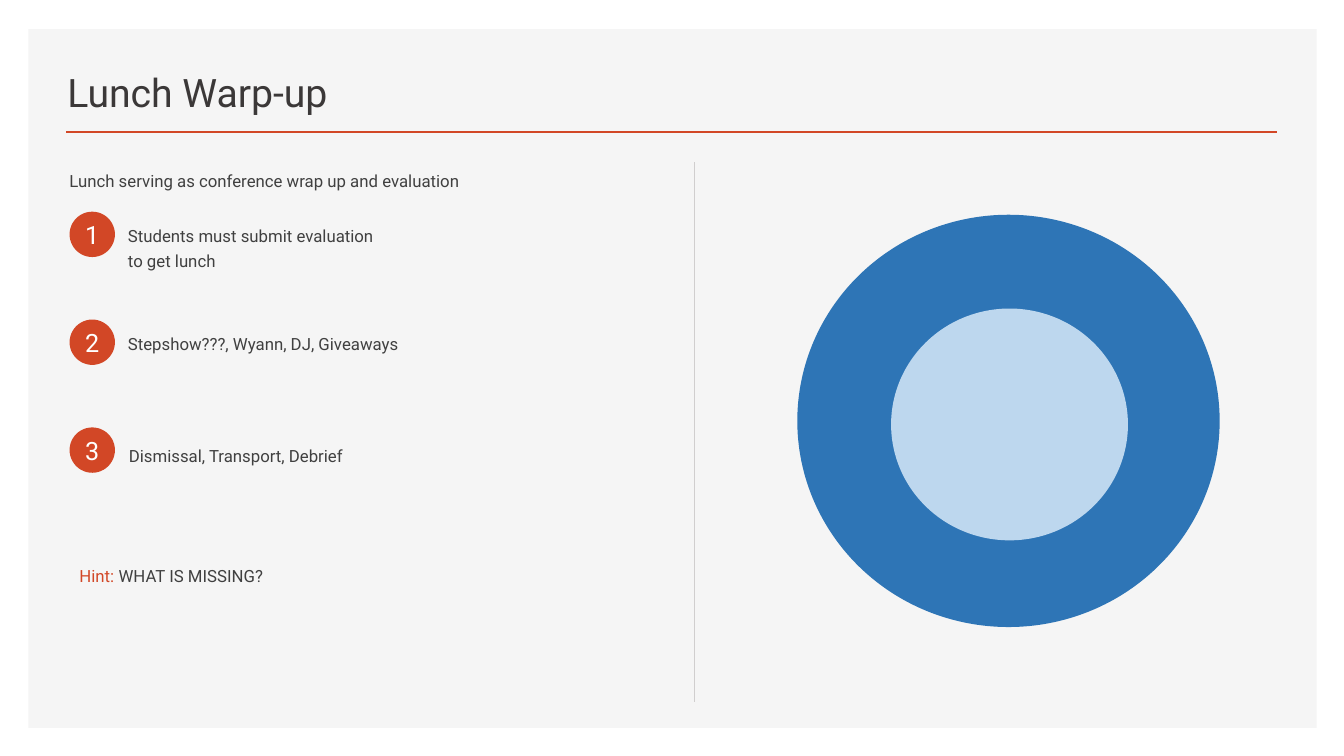
from pptx import Presentation
from pptx.dml.color import RGBColor
from pptx.enum import shapes, text
from pptx.oxml import parse_xml
from pptx.oxml.ns import nsdecls
from pptx.util import Pt

FONT = "Roboto"
ORANGE, GREY = "D24726", "404040"
OVAL, RECT = shapes.MSO_SHAPE.OVAL, shapes.MSO_SHAPE.RECTANGLE
TOP, MIDDLE, BOTTOM = text.MSO_ANCHOR.TOP, text.MSO_ANCHOR.MIDDLE, text.MSO_ANCHOR.BOTTOM


def color(hex_code):
    return RGBColor.from_string(hex_code)


def add_filled(slide, kind, box, fill):
    shape = slide.shapes.add_shape(kind, *map(Pt, box))
    shape.shadow.inherit = False
    shape.fill.solid()
    shape.fill.fore_color.rgb = color(fill)
    shape.line.fill.background()
    return shape


def add_rule(slide, start, end, hue, width):
    rule = slide.shapes.add_connector(
        shapes.MSO_CONNECTOR.STRAIGHT, *map(Pt, (*start, *end)))
    rule.line.color.rgb = color(hue)
    rule.line.width = Pt(width)
    rule._element.spPr.append(parse_xml(f"<a:effectLst {nsdecls('a')}/>"))


def write(frame, parts, size, anchor=TOP):
    """Fill one paragraph with (wording, colour) parts."""
    frame.word_wrap = True
    frame.vertical_anchor = anchor
    line = frame.paragraphs[0]
    line.font.name, line.font.size = FONT, Pt(size)
    for wording, hue in parts:
        run = line.add_run()
        run.text = wording
        run.font.color.rgb = color(hue)
    return line


def add_body(slide, box, *parts):
    frame = slide.shapes.add_textbox(*map(Pt, box)).text_frame
    line = write(frame, parts, 12)
    line.line_spacing = Pt(18)
    line.space_before, line.space_after = Pt(10), Pt(20)


def add_header(slide, left, top, width, height):
    title = slide.shapes.add_textbox(*map(Pt, (left, top, 541.4, height)))
    write(title.text_frame, [("Lunch Warp-up", "3B3838")], 28, BOTTOM)
    rule_y = top + height + 8.6
    add_rule(slide, (left + 6.5, rule_y), (left + width, rule_y), ORANGE, 2)


def add_step(slide, left, top, number, wording, offset, size):
    badge = add_filled(slide, OVAL, (left, top, 32.4, 32.4), ORANGE)
    frame = badge.text_frame
    frame.margin_left = frame.margin_right = 0
    frame.margin_top = frame.margin_bottom = 0
    label = write(frame, [(str(number), "FFFFFF")], 18, MIDDLE)
    label.alignment = text.PP_ALIGN.CENTER
    dx, dy = offset
    add_body(slide, (left + dx, top + dy, *size), (wording, GREY))


def add_agenda(slide, left, top, width):
    add_body(slide, (left, top, width, 37.4),
             ("Lunch serving as conference wrap up and evaluation", GREY))
    steps = [
        ("Students must submit evaluation to get lunch", (34.6, 2.9), (195.8, 72)),
        ("Stepshow???, Wyann, DJ, Giveaways", (34.6, 2.9), (208.8, 114.5)),
        ("Dismissal, Transport, Debrief", (35.3, 5.8), (219.6, 87.1)),
    ]
    for index, step in enumerate(steps):
        add_step(slide, left + 7.2, top + 36.7 + 77.04 * index, index + 1, *step)
    add_body(slide, (left + 7.2, top + 282.2, 271.4, 54.7),
             ("Hint: ", ORANGE), ("WHAT IS MISSING?", GREY))


def add_rings(slide, left, top, width, height):
    add_filled(slide, OVAL, (left, top, width, height), "2E75B6")
    add_filled(slide, OVAL, (left + 67, top + 67, 169.2, 165.6), "BDD7EE")


def main():
    deck = Presentation()
    deck.slide_width, deck.slide_height = Pt(960), Pt(540)
    slide = deck.slides.add_slide(deck.slide_layouts[6])

    # Background panel and title
    add_filled(slide, RECT, (20.2, 20.9, 920.2, 499), "F5F5F5")
    add_header(slide, 41, 35.3, 871.2, 50.4)

    # Numbered agenda on the left
    add_agenda(slide, 42.5, 114.5, 402.5)

    # Divider and nested circles on the right
    add_rule(slide, (496.1, 115.9), (496.1, 501.1), "D0CECE", 0.75)
    add_rings(slide, 569.5, 153.4, 301.7, 294.5)

    deck.save("out.pptx")


if __name__ == "__main__":
    main()
